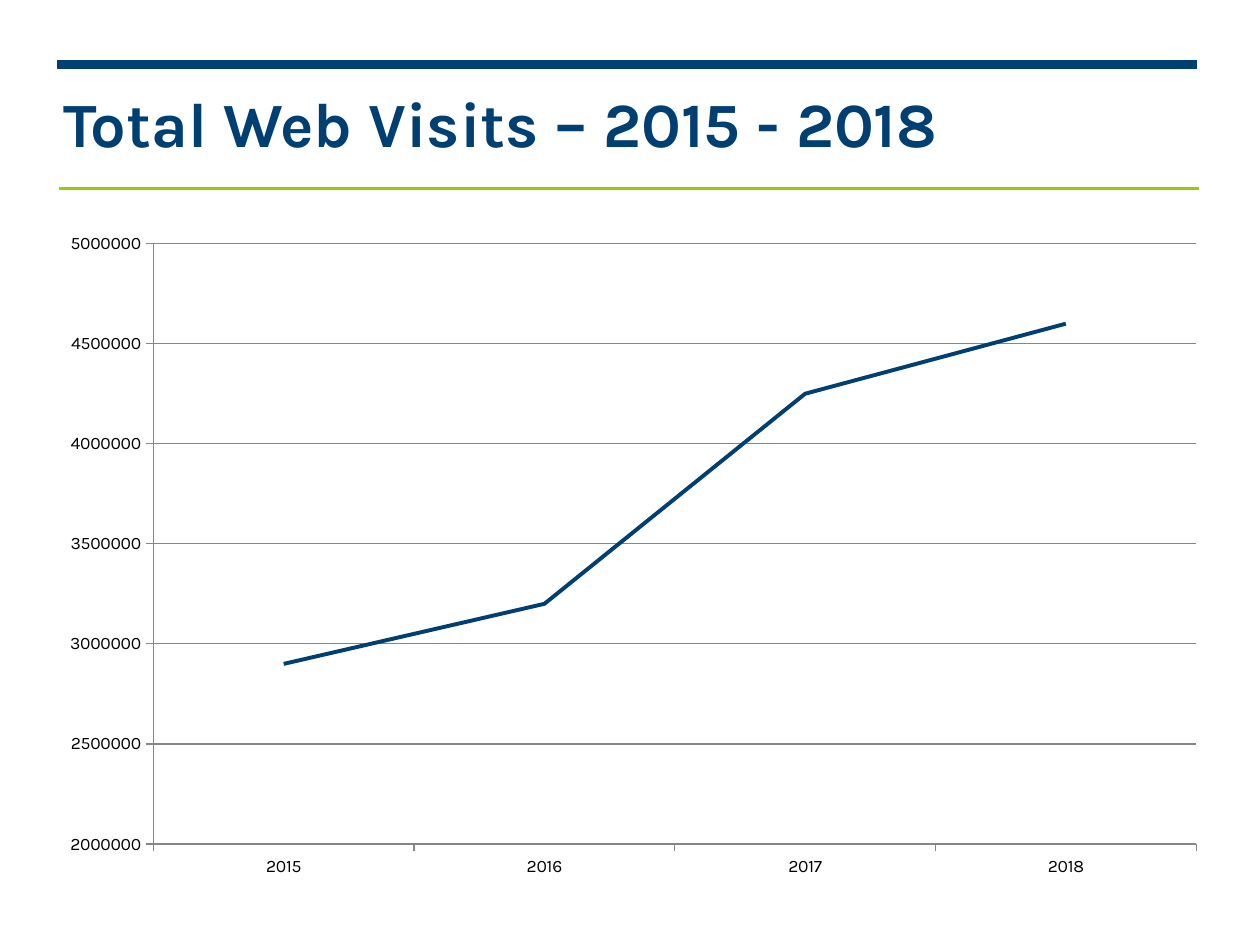
from pptx import Presentation
from pptx.chart.data import CategoryChartData
from pptx.dml.color import RGBColor
from pptx.enum.chart import XL_CHART_TYPE, XL_MARKER_STYLE, XL_TICK_MARK
from pptx.enum.shapes import MSO_SHAPE
from pptx.enum.text import MSO_ANCHOR, MSO_AUTO_SIZE, PP_ALIGN
from pptx.util import Inches, Pt

RECTANGLE = MSO_SHAPE.RECTANGLE
LINE_CHART = XL_CHART_TYPE.LINE
NO_MARKER = XL_MARKER_STYLE.NONE
TICK_OUT, TICK_NONE = XL_TICK_MARK.OUTSIDE, XL_TICK_MARK.NONE
BOTTOM, LEFT, NO_FIT = MSO_ANCHOR.BOTTOM, PP_ALIGN.LEFT, MSO_AUTO_SIZE.NONE

WIDTH, HEIGHT = Inches(10), Inches(7.5)
COLUMNS, ROWS = 100, 75
TITLE_ONLY = 5
FONT = "Karla"
COLORS = {"navy": "003F72", "green": "94CE09", "white": "FFFFFF",
          "black": "000000", "gray": "868686"}
VISITS = {"2015": 2900000, "2016": 3200000, "2017": 4250000, "2018": 4600000}


def color(name):
    return RGBColor.from_string(COLORS[name])


def style_font(font, size, shade, bold=False):
    font.name = FONT
    font.size = Pt(size)
    font.bold = bold
    font.color.rgb = color(shade)


def write(frame, text, size=10, shade="black", bold=False, align=LEFT):
    para = frame.paragraphs[0]
    para.alignment = align
    span = para.add_run()
    span.text = text
    style_font(span.font, size, shade, bold)


class SlideBuilder:
    def __init__(self, deck):
        self.page = deck.slides.add_slide(deck.slide_layouts[TITLE_ONLY])
        self.page.background.fill.solid()
        self.page.background.fill.fore_color.rgb = color("white")

    def place(self, left, top, width, height):
        return (int(WIDTH * left / COLUMNS), int(HEIGHT * top / ROWS),
                int(WIDTH * width / COLUMNS), int(HEIGHT * height / ROWS))

    def rule(self, area, shade):
        bar = self.page.shapes.add_shape(RECTANGLE, *self.place(*area))
        bar.shadow.inherit = False
        bar.fill.solid()
        bar.fill.fore_color.rgb = color(shade)
        bar.line.color.rgb = color("white")
        bar.line.width = Pt(0.75)

    def title(self, area, text):
        box = self.page.shapes.title
        box.left, box.top, box.width, box.height = self.place(*area)
        frame = box.text_frame
        frame.margin_left = frame.margin_right = 0
        frame.margin_top = frame.margin_bottom = 0
        frame.vertical_anchor = BOTTOM
        frame.auto_size = NO_FIT
        frame.word_wrap = True
        write(frame, text, size=36, shade="navy", bold=True)

    def line_chart(self, area, values, low, high, step):
        data = CategoryChartData(number_format="General")
        data.categories = list(values)
        data.add_series("Series 1", list(values.values()))
        chart = self.page.shapes.add_chart(
            LINE_CHART, *self.place(*area), data).chart
        chart.has_legend = False
        chart.has_title = False
        style_font(chart.font, 10, "black")

        plot = chart.plots[0]
        plot.vary_by_categories = False
        series = plot.series[0]
        series.smooth = False
        series.marker.style = NO_MARKER
        series.format.line.color.rgb = color("navy")
        series.format.line.width = Pt(2.25)

        scale = chart.value_axis
        scale.minimum_scale, scale.maximum_scale = low, high
        scale.major_unit = step
        scale.has_major_gridlines = True
        grid = scale.major_gridlines
        for axis in (scale, chart.category_axis):
            axis.major_tick_mark = TICK_OUT
            axis.minor_tick_mark = TICK_NONE
        for part in (scale, chart.category_axis, grid):
            part.format.line.color.rgb = color("gray")
            part.format.line.width = Pt(0.75)


def main():
    deck = Presentation()
    deck.slide_width, deck.slide_height = WIDTH, HEIGHT
    slide = SlideBuilder(deck)
    slide.rule((4.5, 4.7, 90.6, 0.8), "navy")
    slide.rule((4.6, 14.8, 90.6, 0.35), "green")
    slide.title((5, 0.2, 90, 12.5), "Total Web Visits – 2015 - 2018")
    slide.line_chart((3.7, 17.5, 93.1, 53.1), VISITS,
                     low=2000000, high=5000000, step=500000)
    deck.save("out.pptx")


if __name__ == "__main__":
    main()
